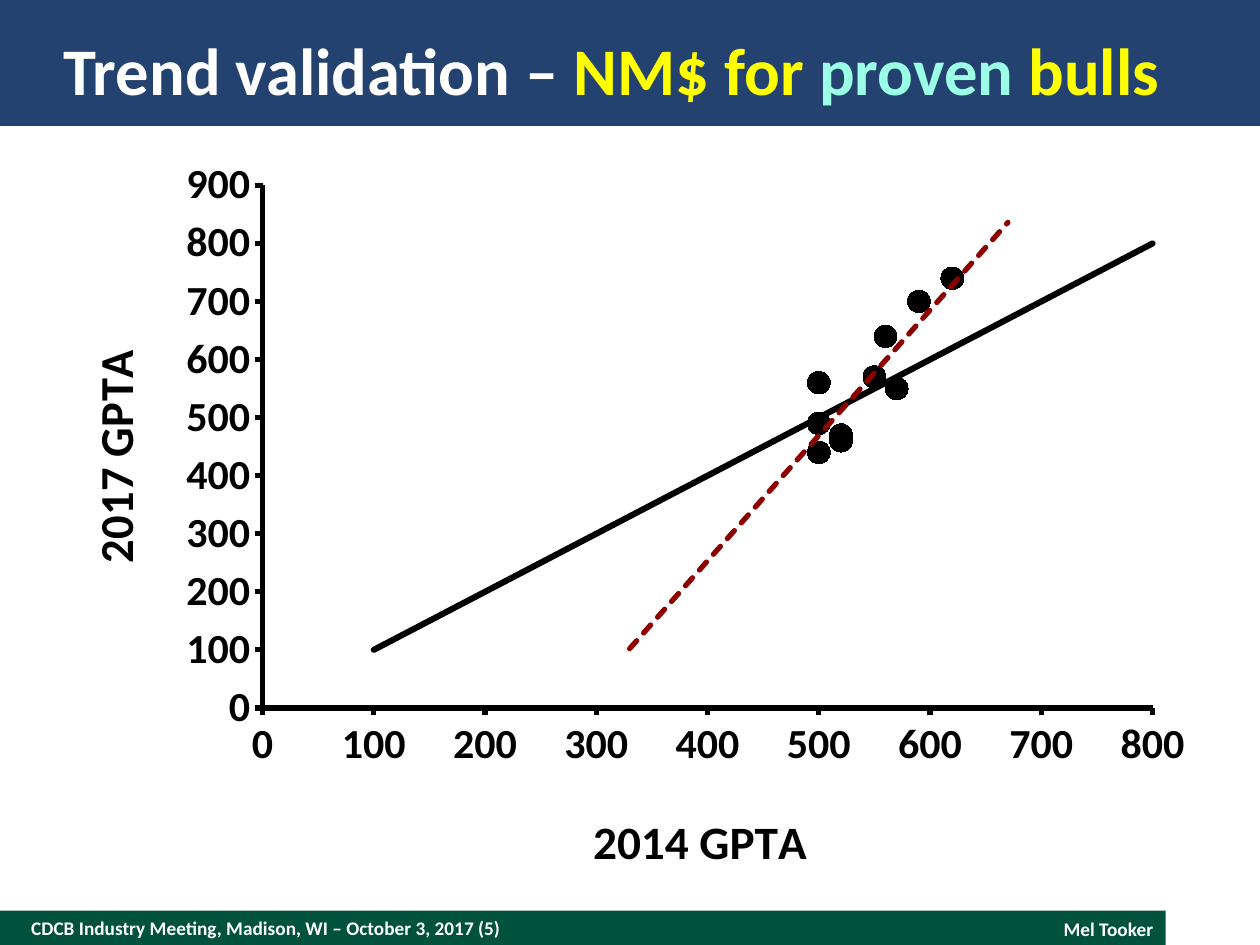
from dataclasses import dataclass

from lxml.etree import SubElement
from pptx import Presentation
from pptx.chart.data import XyChartData
from pptx.dml.color import RGBColor
from pptx.enum.chart import XL_CHART_TYPE, XL_MARKER_STYLE, XL_TICK_MARK
from pptx.enum.shapes import MSO_SHAPE
from pptx.enum.text import MSO_ANCHOR, PP_ALIGN
from pptx.oxml import parse_xml
from pptx.oxml.ns import nsdecls, qn
from pptx.util import Cm, Pt


@dataclass(frozen=True)
class Theme:
    """Colours, font and type sizes of the deck."""
    font: str = "Calibri"
    white: str = "FFFFFF"
    black: str = "000000"
    navy: str = "244270"
    green: str = "00523C"
    yellow: str = "FFFF00"
    mint: str = "9BFFE5"
    dark_red: str = "8C0000"
    title_size: int = 38
    footer_size: int = 11
    axis_title_size: int = 27
    tick_size: int = 24


THEME = Theme()
BULLS = [(620, 740), (590, 700), (550, 570), (560, 640), (570, 550),
         (520, 460), (520, 470), (500, 440), (500, 490), (500, 560)]
EQUALITY = [(value, value) for value in range(100, 900, 100)]


def style_font(font, size, color):
    """Apply the bold theme font in a size and colour."""
    font.name = THEME.font
    font.size = Pt(size)
    font.bold = True
    font.color.rgb = RGBColor.from_string(color)


def add_band(page, left, top, width, height, color):
    """Place a plain filled band."""
    band = page.shapes.add_shape(MSO_SHAPE.RECTANGLE, Cm(left), Cm(top), Cm(width), Cm(height))
    band.shadow.inherit = False
    band.fill.solid()
    band.fill.fore_color.rgb = RGBColor.from_string(color)
    band.line.fill.background()


def add_text(page, left, top, width, height, spans, size, align=PP_ALIGN.LEFT):
    """Place one line of coloured spans, centred vertically."""
    box = page.shapes.add_textbox(Cm(left), Cm(top), Cm(width), Cm(height))
    frame = box.text_frame
    frame.word_wrap = True
    frame.vertical_anchor = MSO_ANCHOR.MIDDLE
    frame.margin_left = frame.margin_right = frame.margin_top = frame.margin_bottom = 0
    para = frame.paragraphs[0]
    para.alignment = align
    for text, color in spans:
        span = para.add_run()
        span.text = text
        style_font(span.font, size, color)


def add_header(page, left, top, width, height):
    """Place the title band and its title."""
    add_band(page, left, top, width, height, THEME.navy)
    spans = [("Trend validation – ", THEME.white), ("NM$ for ", THEME.yellow),
             ("proven", THEME.mint), (" bulls", THEME.yellow)]
    add_text(page, left + 1.28, top + 0.49, width - 2.54, 1.78, spans, THEME.title_size)


def add_footer(page, left, top, width, height):
    """Place the footer band with the meeting and the speaker."""
    add_band(page, left, top, width, height, THEME.green)
    meeting = [("CDCB Industry Meeting, Madison, WI – October 3, 2017 (5)", THEME.white)]
    add_text(page, left + 0.63, top, 16.5, height, meeting, THEME.footer_size)
    speaker = [("Mel Tooker", THEME.white)]
    add_text(page, left + width - 5.08, top + 0.01, 4.83, height, speaker,
             THEME.footer_size, PP_ALIGN.RIGHT)


def set_layout(parent, index, inner=False, **fractions):
    """Fix the position of a chart part by fractions of the chart."""
    for old in parent.findall(qn("c:layout")):
        parent.remove(old)
    layout = parse_xml(f"<c:layout {nsdecls('c')}><c:manualLayout/></c:layout>")
    manual = layout[0]
    if inner:
        SubElement(manual, qn("c:layoutTarget")).set("val", "inner")
    for axis in ("x", "y"):
        SubElement(manual, qn(f"c:{axis}Mode")).set("val", "edge")
    for name, value in fractions.items():
        SubElement(manual, qn(f"c:{name}")).set("val", str(value))
    parent.insert(index, layout)


def style_axis(axis, title, maximum, title_x, title_y):
    """Set the scale, line, labels and title of an axis."""
    axis.minimum_scale, axis.maximum_scale, axis.major_unit = 0, maximum, 100
    axis.has_major_gridlines = False
    axis.major_tick_mark = XL_TICK_MARK.OUTSIDE
    axis.minor_tick_mark = XL_TICK_MARK.NONE
    axis.format.line.color.rgb = RGBColor.from_string(THEME.black)
    axis.format.line.width = Pt(3)
    axis.tick_labels.number_format = "0"
    axis.tick_labels.number_format_is_linked = False
    style_font(axis.tick_labels.font, THEME.tick_size, THEME.black)
    span = axis.axis_title.text_frame.paragraphs[0].add_run()
    span.text = title
    style_font(span.font, THEME.axis_title_size, THEME.black)
    set_layout(axis.axis_title._element, 1, x=title_x, y=title_y)


def add_trend(series, color, width, dash="solid", forward=0, backward=0):
    """Add a linear trend line to a series."""
    trend = parse_xml(
        f'<c:trendline {nsdecls("c", "a")}><c:spPr><a:ln w="{Pt(width)}" cap="rnd">'
        f'<a:solidFill><a:srgbClr val="{color}"/></a:solidFill><a:prstDash val="{dash}"/>'
        f'</a:ln></c:spPr><c:trendlineType val="linear"/><c:forward val="{forward}"/>'
        f'<c:backward val="{backward}"/><c:dispRSqr val="0"/><c:dispEq val="0"/></c:trendline>')
    series._element.find(qn("c:xVal")).addprevious(trend)


def add_scatter(page, left, top, width, height):
    """Place the scatter chart of bulls with both trend lines."""
    chart_data = XyChartData()
    for name, points in (("Series 1", BULLS), ("Series 2", EQUALITY)):
        data_series = chart_data.add_series(name)
        for x, y in points:
            data_series.add_data_point(x, y)
    chart = page.shapes.add_chart(XL_CHART_TYPE.XY_SCATTER, Cm(left), Cm(top),
                                  Cm(width), Cm(height), chart_data).chart
    chart.has_title = chart.has_legend = False
    chart.font.name = THEME.font
    chart.font.size = Pt(10)
    chart.font.color.rgb = RGBColor.from_string(THEME.black)
    plot = chart.plots[0]
    plot.vary_by_categories = False
    bulls, equality = plot.series
    for series in (bulls, equality):
        series.smooth = False
        series.format.line.fill.background()
    bulls.marker.style = XL_MARKER_STYLE.CIRCLE
    bulls.marker.size = 13
    bulls.marker.format.fill.solid()
    bulls.marker.format.fill.fore_color.rgb = RGBColor.from_string(THEME.black)
    bulls.marker.format.line.fill.background()
    equality.marker.style = XL_MARKER_STYLE.NONE
    add_trend(bulls, THEME.dark_red, 3, "sysDash", forward=50, backward=170)
    add_trend(equality, THEME.black, 3.5)
    style_axis(chart.category_axis, "2014 GPTA", 800, 0.46, 0.9)
    style_axis(chart.value_axis, "2017 GPTA", 900, 0.01, 0.26)
    plot_area = chart._chartSpace.chart.plotArea
    set_layout(plot_area, 0, inner=True, x=0.176, y=0.035, w=0.785, h=0.734)


def main():
    """Build the slide and save the deck."""
    deck = Presentation()
    deck.slide_width, deck.slide_height = Cm(25.4), Cm(19.05)
    page = deck.slides.add_slide(deck.slide_layouts[6])
    add_footer(page, 0, 18.36, 23.5, 0.69)
    add_header(page, 0, 0, 25.4, 2.54)
    add_scatter(page, 1.27, 3.23, 22.86, 14.63)
    deck.save("out.pptx")


if __name__ == "__main__":
    main()
